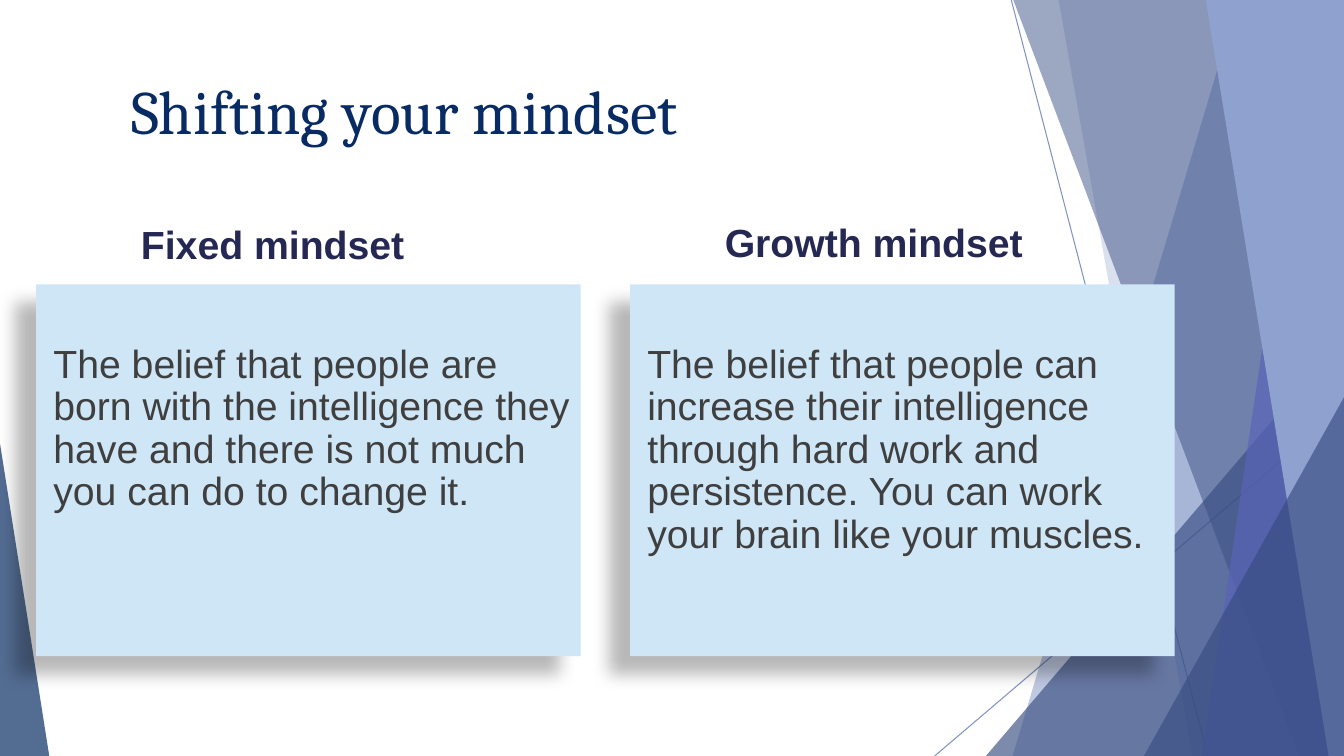
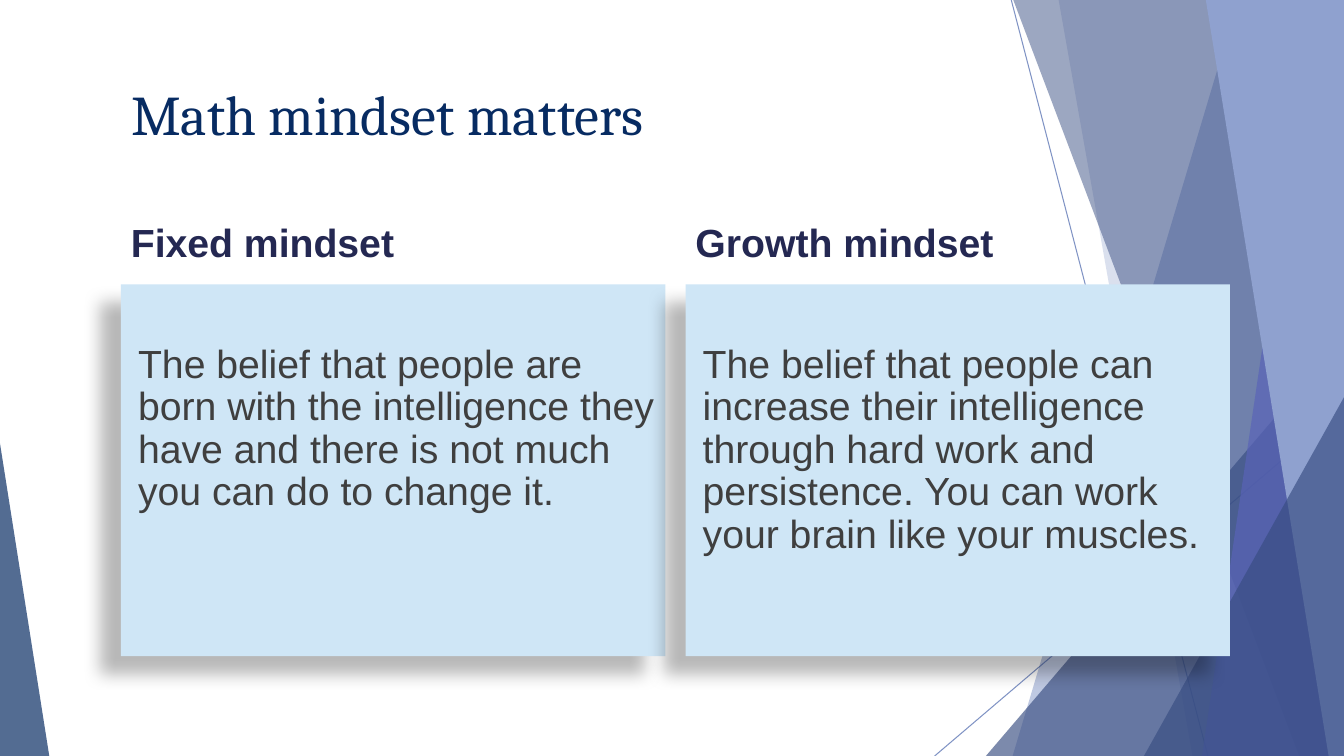
from lxml import etree
from pptx import Presentation
from pptx.dml.color import RGBColor
from pptx.enum.shapes import MSO_CONNECTOR, MSO_SHAPE
from pptx.enum.text import MSO_ANCHOR, MSO_AUTO_SIZE, PP_ALIGN
from pptx.oxml.ns import qn
from pptx.util import Inches, Pt

LEFT = PP_ALIGN.LEFT
TOP, MIDDLE, BOTTOM = MSO_ANCHOR.TOP, MSO_ANCHOR.MIDDLE, MSO_ANCHOR.BOTTOM
TRIANGLE, RECTANGLE = MSO_SHAPE.ISOSCELES_TRIANGLE, MSO_SHAPE.RECTANGLE
STRAIGHT = MSO_CONNECTOR.STRAIGHT
NO_AUTOFIT = MSO_AUTO_SIZE.NONE

COLORS = {
    "blue": "4A66AC", "deep": "374C81", "violet": "5963B8", "light": "8FA1CF",
    "navy": "072B62", "heading": "242852", "panel": "CFE6F6", "text": "3F3F3F",
    "shadow": "000000",
}
TITLE_FONT, BODY_FONT = "Cambria", "Arial"
WIDTH, HEIGHT, BLEED = 13.33, 7.5, 7.51
COLUMN_WIDTH, HEADING_HEIGHT = 5.4, 0.81
PANEL_TOP, PANEL_HEIGHT = 2.82, 3.69

# Content: title, title size, heading positions, panel lefts
SLIDES = [
    ("Shifting your mindset", 44, [(1.3, 2.04), (7.09, 2.02)], [0.36, 6.25]),
    ("Math mindset matters", 40, [(1.2, 2.02), (6.8, 2.02)], [1.2, 6.8]),
]
COLUMNS = [
    ("Fixed mindset",
     "The belief that people are born with the intelligence they have and "
     "there is not much you can do to change it."),
    ("Growth mindset",
     "The belief that people can increase their intelligence through hard work "
     "and persistence. You can work your brain like your muscles."),
]

# Backdrop, from back to front
RAYS = [((10.03, 0), (11.98, HEIGHT)), ((WIDTH, 4.04), (9.27, HEIGHT))]
# Bands reach the right edge: (top x, bottom x, colour, opacity)
# Triangles: (left, top, width, apex, colour, opacity), down to the bottom edge
FACETS = [
    ("band", 12.28, 10.04, "blue", 35),
    ("band", 10.5, 11.83, "blue", 20),
    ("triangle", 9.77, 3.34, 3.56, 1, "deep", 65),
    ("band", 10.05, 12.89, "deep", 49),
    ("band", 13.03, 11.92, "violet", 69),
    ("band", 11.96, 13.18, "light", 100),
    ("triangle", 11.34, 3.94, 1.99, 1, "deep", 65),
    ("triangle", 0, 4.4, 0.49, 0, "navy", 69),
]


def color(name):
    return RGBColor.from_string(COLORS[name])


def inches(*values):
    return [Inches(value) for value in values]


def set_opacity(shape, percent):
    for node in shape.element.iter(qn("a:srgbClr")):
        etree.SubElement(node, qn("a:alpha"), val=str(percent * 1000))


def paint(shape, name, opacity=100):
    shape.fill.solid()
    shape.fill.fore_color.rgb = color(name)
    shape.line.fill.background()
    shape.shadow.inherit = False
    if opacity < 100:
        set_opacity(shape, opacity)


def add_band(page, top_x, bottom_x):
    outline = page.shapes.build_freeform(*inches(top_x, 0), scale=1.0)
    corners = [(WIDTH, 0), (WIDTH, BLEED), (bottom_x, BLEED)]
    outline.add_line_segments([inches(*corner) for corner in corners], close=True)
    return outline.convert_to_shape()


def add_triangle(page, left, top, width, apex):
    shape = page.shapes.add_shape(TRIANGLE, *inches(left, top, width, BLEED - top))
    shape.adjustments[0] = apex
    return shape


def add_backdrop(page, layout):
    """Draw the backdrop and move it to the layout, behind its placeholders."""
    parts = []
    for start, end in RAYS:
        ray = page.shapes.add_connector(STRAIGHT, *inches(*start, *end))
        ray.line.color.rgb = color("blue")
        ray.line.width = Pt(0.75)
        set_opacity(ray, 69)
        etree.SubElement(ray.element.spPr, qn("a:effectLst"))
        parts.append(ray)
    makers = {"band": add_band, "triangle": add_triangle}
    for kind, *place, name, opacity in FACETS:
        facet = makers[kind](page, *place)
        paint(facet, name, opacity)
        parts.append(facet)
    for position, part in enumerate(parts, start=2):
        layout.shapes.element.insert(position, part.element)


def write(shape, text, size, name, font=BODY_FONT, bold=False, spacing=0.9,
          anchor=TOP, margins=(0.1, 0.05, 0.1, 0.05)):
    frame = shape.text_frame
    frame.text = text
    frame.word_wrap = True
    frame.auto_size = NO_AUTOFIT
    frame.vertical_anchor = anchor
    (frame.margin_left, frame.margin_top,
     frame.margin_right, frame.margin_bottom) = inches(*margins)
    para = frame.paragraphs[0]
    para.alignment = LEFT
    para.line_spacing = spacing
    para.space_before = Pt(0)
    span = para.runs[0].font
    span.name, span.size, span.bold = font, Pt(size), bold
    span.color.rgb = color(name)


def add_title(page, text, size):
    title = page.shapes.title
    title.left, title.top, title.width, title.height = inches(1.2, 0.31, 11, 1.2)
    write(title, text, size, "navy", TITLE_FONT, spacing=0.85, anchor=BOTTOM)


def add_heading(page, place, text):
    box = page.shapes.add_textbox(*inches(*place, COLUMN_WIDTH, HEADING_HEIGHT))
    write(box, text, 28, "heading", bold=True, anchor=MIDDLE)


def add_panel(page, left, text):
    panel = page.shapes.add_shape(
        RECTANGLE, *inches(left, PANEL_TOP, COLUMN_WIDTH, PANEL_HEIGHT))
    paint(panel, "panel")
    effects = panel.element.spPr.find(qn("a:effectLst"))
    shadow = etree.SubElement(
        effects, qn("a:outerShdw"), blurRad=str(Pt(11.8)), dist=str(Pt(19.7)),
        dir=str(141 * 60000), algn="tr", rotWithShape="0")
    tint = etree.SubElement(shadow, qn("a:srgbClr"), val=COLORS["shadow"])
    etree.SubElement(tint, qn("a:alpha"), val="27000")
    write(panel, text, 28, "text", margins=(0.17, 0.6, 0, 0.05))


def main():
    deck = Presentation()
    deck.slide_width, deck.slide_height = inches(WIDTH, HEIGHT)
    layout = deck.slide_layouts[5]
    for number, (title, size, heading_places, panel_lefts) in enumerate(SLIDES):
        page = deck.slides.add_slide(layout)
        if number == 0:
            add_backdrop(page, layout)
        add_title(page, title, size)
        for (heading, belief), place, left in zip(COLUMNS, heading_places, panel_lefts):
            add_heading(page, place, heading)
            add_panel(page, left, belief)
    deck.save("out.pptx")


if __name__ == "__main__":
    main()
